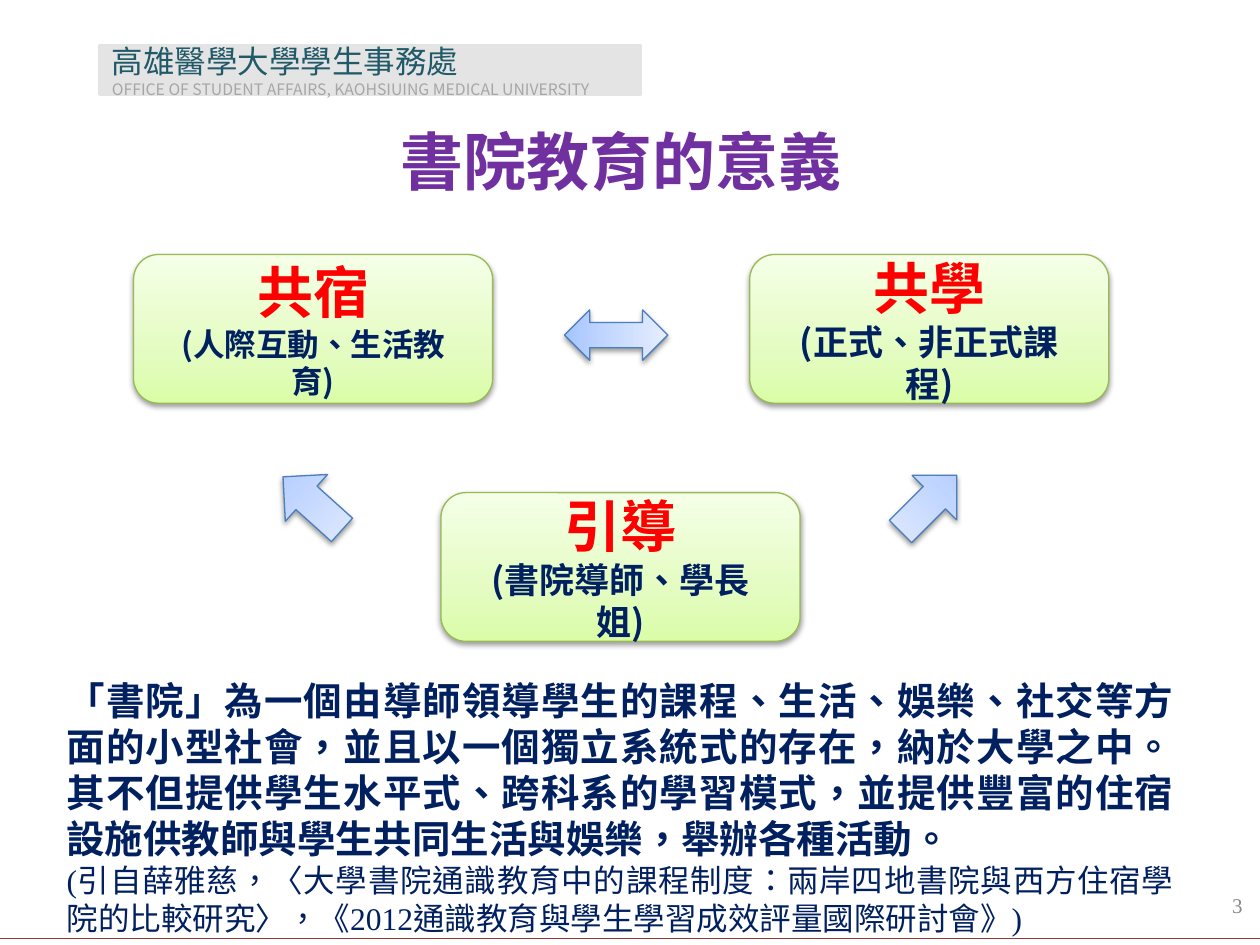
from dataclasses import dataclass

from lxml.etree import SubElement
from pptx import Presentation
from pptx.dml.color import RGBColor
from pptx.enum.lang import MSO_LANGUAGE_ID
from pptx.enum.shapes import MSO_CONNECTOR, MSO_SHAPE
from pptx.enum.text import MSO_ANCHOR, PP_ALIGN
from pptx.oxml.ns import qn
from pptx.util import Inches, Pt

SANS = "Noto Sans CJK SC"
SERIF = "Times New Roman"

PURPLE = RGBColor(0x70, 0x30, 0xA0)
NAVY = RGBColor(0x00, 0x20, 0x60)
RED = RGBColor(0xFF, 0x00, 0x00)
TEAL = RGBColor(0x21, 0x59, 0x68)
SILVER = RGBColor(0xA6, 0xA6, 0xA6)
GRAY = RGBColor(0x89, 0x89, 0x89)
BANNER = RGBColor(0xE4, 0xE4, 0xE4)
MAROON = RGBColor(0x95, 0x37, 0x35)
GREEN_LINE = RGBColor(0x98, 0xB9, 0x55)
BLUE_LINE = RGBColor(0x4B, 0x7E, 0xBC)
GREEN_STOPS = (
    (0, RGBColor(0xDA, 0xFD, 0xA7)),
    (35, RGBColor(0xE4, 0xFC, 0xC2)),
    (100, RGBColor(0xF5, 0xFF, 0xE7)),
)
BLUE_STOPS = (
    (0, RGBColor(0xA4, 0xC4, 0xFF)),
    (35, RGBColor(0xBF, 0xD4, 0xFF)),
    (100, RGBColor(0xE6, 0xEE, 0xFF)),
)


@dataclass
class TextLine:
    text: str
    size: float
    color: RGBColor
    font: str = SANS
    bold: bool = False


@dataclass
class Concept:
    left: float
    top: float
    heading: str
    detail: str
    detail_size: float


@dataclass
class Arrow:
    preset: MSO_SHAPE
    left: float
    top: float
    width: float
    height: float
    rotation: float


CONCEPTS = (
    Concept(5.95, 2.02, "共學", "(正式、非正式課程)", 20),
    Concept(1.06, 2.02, "共宿", "(人際互動、生活教育)", 18),
    Concept(3.5, 3.91, "引導", "(書院導師、學長姐)", 20),
)
ARROWS = (
    Arrow(MSO_SHAPE.UP_DOWN_ARROW, 4.69, 2.25, 0.4, 0.82, 90),
    Arrow(MSO_SHAPE.DOWN_ARROW, 7.12, 3.68, 0.5, 0.63, 225),
    Arrow(MSO_SHAPE.DOWN_ARROW, 2.23, 3.68, 0.5, 0.63, 132),
)


def write_lines(shape, lines: list[TextLine], alignment: PP_ALIGN,
                anchor: MSO_ANCHOR = MSO_ANCHOR.MIDDLE) -> None:
    frame = shape.text_frame
    frame.word_wrap = True
    frame.vertical_anchor = anchor
    frame.text = "\n".join(line.text for line in lines)
    for paragraph, line in zip(frame.paragraphs, lines):
        paragraph.alignment = alignment
        for run in paragraph.runs:
            font = run.font
            font.size = Pt(line.size)
            font.bold = line.bold
            font.color.rgb = line.color
            font.name = line.font
            font.language_id = MSO_LANGUAGE_ID.TRADITIONAL_CHINESE
            SubElement(font._element, qn("a:ea")).set("typeface", SANS)


def add_text(slide, left: float, top: float, width: float, height: float,
             lines: list[TextLine], alignment: PP_ALIGN,
             anchor: MSO_ANCHOR = MSO_ANCHOR.MIDDLE) -> None:
    box = slide.shapes.add_textbox(
        Inches(left), Inches(top), Inches(width), Inches(height))
    write_lines(box, lines, alignment, anchor)


def apply_glossy_style(shape, stops: tuple, line_color: RGBColor) -> None:
    """Upward three-stop gradient, thin outline and a soft shadow below."""
    shape.fill.gradient()
    shape.fill.gradient_angle = 90
    properties = shape._element.spPr
    stop_list = properties.find(".//" + qn("a:gsLst"))
    for stop in list(stop_list):
        stop_list.remove(stop)
    for position, color in stops:
        stop = SubElement(stop_list, qn("a:gs"), pos=str(position * 1000))
        SubElement(stop, qn("a:srgbClr"), val=str(color))
    shape.line.color.rgb = line_color
    shape.line.width = Pt(0.75)
    shape.shadow.inherit = False
    shadow = SubElement(
        properties.find(qn("a:effectLst")), qn("a:outerShdw"),
        blurRad=str(Pt(3.1)), dist=str(Pt(1.6)), dir="5400000", rotWithShape="0")
    shadow_color = SubElement(shadow, qn("a:srgbClr"), val="000000")
    SubElement(shadow_color, qn("a:alpha"), val="38000")


def add_concept(slide, concept: Concept) -> None:
    shape = slide.shapes.add_shape(
        MSO_SHAPE.ROUNDED_RECTANGLE, Inches(concept.left), Inches(concept.top),
        Inches(2.85), Inches(1.18))
    apply_glossy_style(shape, GREEN_STOPS, GREEN_LINE)
    frame = shape.text_frame
    frame.margin_left = frame.margin_right = Inches(0.2)
    frame.margin_top = frame.margin_bottom = 0
    write_lines(shape, [
        TextLine(concept.heading, 32, RED, bold=True),
        TextLine(concept.detail, concept.detail_size, NAVY, bold=True),
    ], PP_ALIGN.CENTER)


def add_arrow(slide, arrow: Arrow) -> None:
    shape = slide.shapes.add_shape(
        arrow.preset, Inches(arrow.left), Inches(arrow.top),
        Inches(arrow.width), Inches(arrow.height))
    shape.rotation = arrow.rotation
    apply_glossy_style(shape, BLUE_STOPS, BLUE_LINE)


def add_frame(slide) -> None:
    """Bottom rule and the office banner."""
    rule = slide.shapes.add_connector(
        MSO_CONNECTOR.STRAIGHT, 0, Inches(7.45), Inches(10), Inches(7.45))
    rule.line.color.rgb = MAROON
    rule.line.width = Pt(0.75)
    SubElement(rule._element.spPr, qn("a:effectLst"))

    banner = slide.shapes.add_shape(
        MSO_SHAPE.RECTANGLE, Inches(0.79), Inches(0.36), Inches(4.29), Inches(0.39))
    banner.shadow.inherit = False
    banner.fill.solid()
    banner.fill.fore_color.rgb = BANNER
    banner.line.color.rgb = BANNER
    banner.line.width = Pt(2)
    banner.text_frame.margin_top = banner.text_frame.margin_bottom = 0
    write_lines(banner, [
        TextLine("高雄醫學大學學生事務處", 18, TEAL),
        TextLine("OFFICE OF STUDENT AFFAIRS, KAOHSIUING MEDICAL UNIVERSITY", 9, SILVER),
    ], PP_ALIGN.LEFT)


def main() -> None:
    presentation = Presentation()
    presentation.slide_width = Inches(10)
    presentation.slide_height = Inches(7.5)
    slide = presentation.slides.add_slide(presentation.slide_layouts[6])

    add_frame(slide)

    # Title and page number
    add_text(slide, 0.75, 0.92, 8.36, 0.71,
             [TextLine("書院教育的意義", 36, PURPLE, SERIF, True)], PP_ALIGN.CENTER)
    add_text(slide, 7.63, 6.98, 2.33, 0.4,
             [TextLine("3", 12, GRAY, SERIF)], PP_ALIGN.RIGHT)

    # Definition and its source
    add_text(slide, 0.43, 5.32, 8.99, 2.19, [
        TextLine("「書院」為一個由導師領導學生的課程、生活、娛樂、社交等方面的小型社會，"
                 "並且以一個獨立系統式的存在，納於大學之中。其不但提供學生水平式、跨科系的"
                 "學習模式，並提供豐富的住宿設施供教師與學生共同生活與娛樂，舉辦各種活動。",
                 22, NAVY, SERIF, True),
        TextLine("(引自薛雅慈，〈大學書院通識教育中的課程制度：兩岸四地書院與西方住宿學院的"
                 "比較研究〉，《2012通識教育與學生學習成效評量國際研討會》)",
                 18, NAVY, SERIF),
    ], PP_ALIGN.JUSTIFY, MSO_ANCHOR.TOP)

    # Concept diagram
    for concept in CONCEPTS:
        add_concept(slide, concept)
    for arrow in ARROWS:
        add_arrow(slide, arrow)

    presentation.save("out.pptx")


if __name__ == "__main__":
    main()
